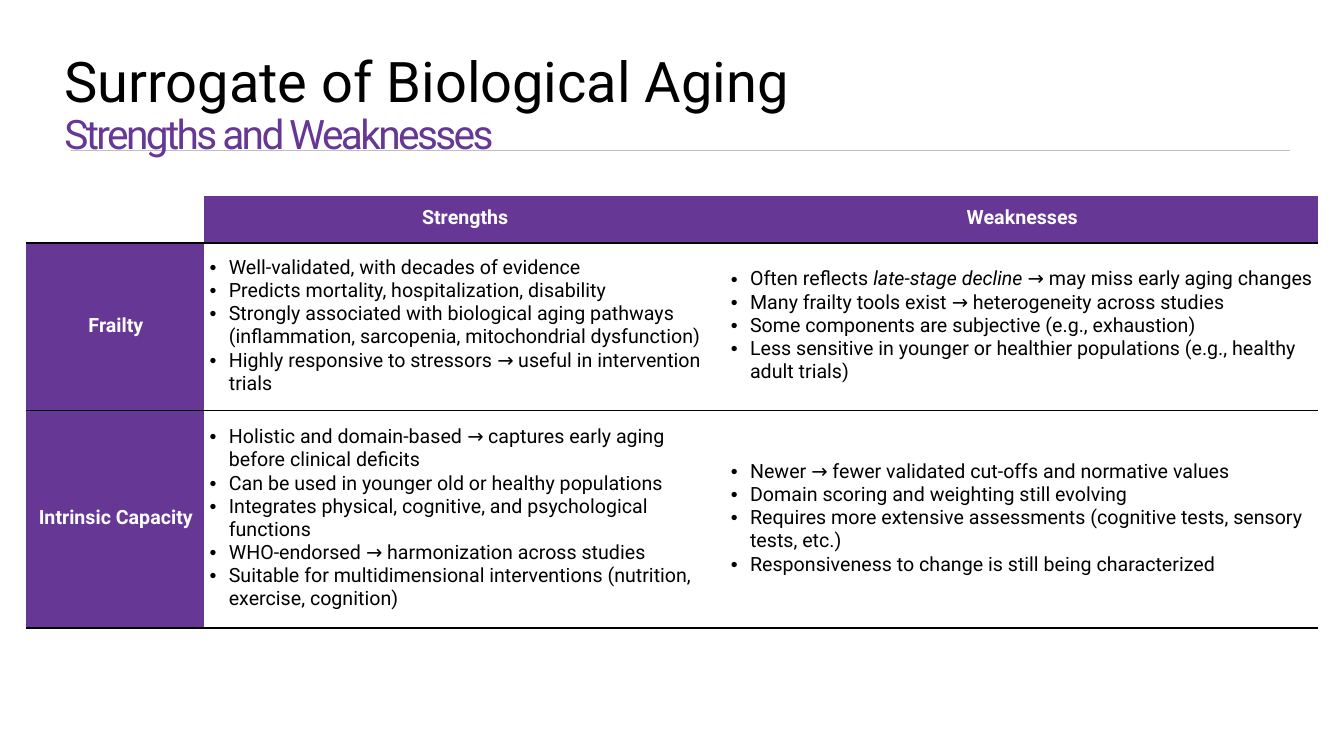
"""Build a slide comparing strengths and weaknesses of two aging surrogates."""
import pptx
import pptx.dml.color
import pptx.enum.text
import pptx.oxml
import pptx.oxml.ns
import pptx.util
from pptx.util import Inches

FONT = "Roboto"
PURPLE, BLACK, WHITE, GREY = "663795", "000000", "FFFFFF", "BFBFBF"
TITLE = [("Surrogate of Biological Aging", 40, BLACK), ("Strengths and Weaknesses", 29, PURPLE)]
SUBTITLE_SPACING = "-190"
HEADERS = ["", "Strengths", "Weaknesses"]
ITALIC_PHRASE = "late-stage decline"
ROWS = [
    ("Frailty",
     ["Well-validated, with decades of evidence",
      "Predicts mortality, hospitalization, disability",
      "Strongly associated with biological aging pathways (inflammation, sarcopenia, mitochondrial dysfunction)",
      "Highly responsive to stressors → useful in intervention trials"],
     ["Often reflects late-stage decline → may miss early aging changes",
      "Many frailty tools exist → heterogeneity across studies",
      "Some components are subjective (e.g., exhaustion)",
      "Less sensitive in younger or healthier populations (e.g., healthy adult trials)"]),
    ("Intrinsic Capacity",
     ["Holistic and domain-based → captures early aging before clinical deficits",
      "Can be used in younger old or healthy populations",
      "Integrates physical, cognitive, and psychological functions",
      "WHO-endorsed → harmonization across studies",
      "Suitable for multidimensional interventions (nutrition, exercise, cognition)"],
     ["Newer → fewer validated cut-offs and normative values",
      "Domain scoring and weighting still evolving",
      "Requires more extensive assessments (cognitive tests, sensory tests, etc.)",
      "Responsiveness to change is still being characterized"]),
]
COLUMN_WIDTHS = [1.76, 5.17, 5.88]
ROW_HEIGHTS = [0.47, 1.66, 2.16]
TABLE_LEFT, TABLE_TOP = 0.26, 1.94
BULLET_INDENT = Inches(0.19)


def color(value):
    return pptx.dml.color.RGBColor.from_string(value)


def add_xml(parent, xml):
    namespace = pptx.oxml.ns.nsdecls("a")
    parent.append(pptx.oxml.parse_xml(xml.replace(">", f" {namespace}>", 1)
                                      if "/>" not in xml.split(">")[0] + ">"
                                      else xml.replace("/>", f" {namespace}/>", 1)))


def style_span(span, size, tint, bold=False):
    span.font.name = FONT
    span.font.size = pptx.util.Pt(size)
    span.font.bold = bold
    span.font.color.rgb = color(tint)


def add_rule(page):
    rule = page.shapes.add_connector(1, Inches(0.7), Inches(1.49), Inches(12.79), Inches(1.49))
    rule.line.color.rgb = color(GREY)
    rule.line.width = pptx.util.Pt(0.5)
    add_xml(rule.element.spPr, "<a:effectLst/>")


def add_title(page):
    box = page.shapes.add_textbox(Inches(0.54), Inches(0.49), Inches(11.5), Inches(1.45))
    box.text_frame.word_wrap = True
    para = box.text_frame.paragraphs[0]
    para.text = "\v".join(text for text, size, tint in TITLE)
    para.line_spacing = 0.9
    for span, (text, size, tint) in zip(para.runs, TITLE):
        style_span(span, size, tint)
    para.runs[-1].font._element.set("spc", SUBTITLE_SPACING)


def prepare_cell(cell, fill):
    cell.margin_left, cell.margin_top = Inches(0.06), Inches(0.06)
    cell.margin_right, cell.margin_bottom = Inches(0.04), Inches(0.08)
    cell.vertical_anchor = pptx.enum.text.MSO_ANCHOR.MIDDLE
    add_xml(cell._tc.get_or_add_tcPr(),
            f'<a:lnB w="12700"><a:solidFill><a:srgbClr val="{BLACK}"/></a:solidFill></a:lnB>')
    if fill:
        cell.fill.solid()
        cell.fill.fore_color.rgb = color(fill)
    else:
        cell.fill.background()


def fill_label(cell, text):
    prepare_cell(cell, PURPLE if text else None)
    para = cell.text_frame.paragraphs[0]
    para.text = text
    para.alignment = pptx.enum.text.PP_ALIGN.CENTER
    for span in para.runs:
        style_span(span, 14, WHITE, bold=True)


def fill_bullets(cell, points):
    prepare_cell(cell, None)
    cell.text_frame.text = "\n".join(points)
    for para, point in zip(cell.text_frame.paragraphs, points):
        properties = para._p.get_or_add_pPr()
        properties.set("marL", str(BULLET_INDENT))
        properties.set("indent", str(-BULLET_INDENT))
        add_xml(properties, '<a:buFont typeface="Arial"/>')
        add_xml(properties, '<a:buChar char="•"/>')
        before, phrase, after = point.partition(ITALIC_PHRASE)
        para.runs[0].text = before
        for part in filter(None, (phrase, after)):
            para.add_run().text = part
        for span in para.runs:
            style_span(span, 14, BLACK)
            span.font.italic = span.text == ITALIC_PHRASE


def add_comparison(page):
    frame = page.shapes.add_table(len(ROW_HEIGHTS), len(COLUMN_WIDTHS), Inches(TABLE_LEFT), Inches(TABLE_TOP),
                                  Inches(sum(COLUMN_WIDTHS)), Inches(sum(ROW_HEIGHTS)))
    table = frame.table
    table.first_row = table.horz_banding = False
    style = table._tbl.tblPr.find(pptx.oxml.ns.qn("a:tableStyleId"))
    style.text = "{2D5ABB26-0587-4C30-8999-92F81FD0307C}"
    for column, width in zip(table.columns, COLUMN_WIDTHS):
        column.width = Inches(width)
    for row, height in zip(table.rows, ROW_HEIGHTS):
        row.height = Inches(height)
    for row, contents in zip(table.rows, [HEADERS, *ROWS]):
        for cell, content in zip(row.cells, contents):
            if isinstance(content, str):
                fill_label(cell, content)
            else:
                fill_bullets(cell, content)


def main():
    deck = pptx.Presentation()
    deck.slide_width, deck.slide_height = Inches(13.33), Inches(7.5)
    page = deck.slides.add_slide(deck.slide_layouts[6])
    add_rule(page)
    add_title(page)
    add_comparison(page)
    deck.save("out.pptx")


if __name__ == "__main__":
    main()
